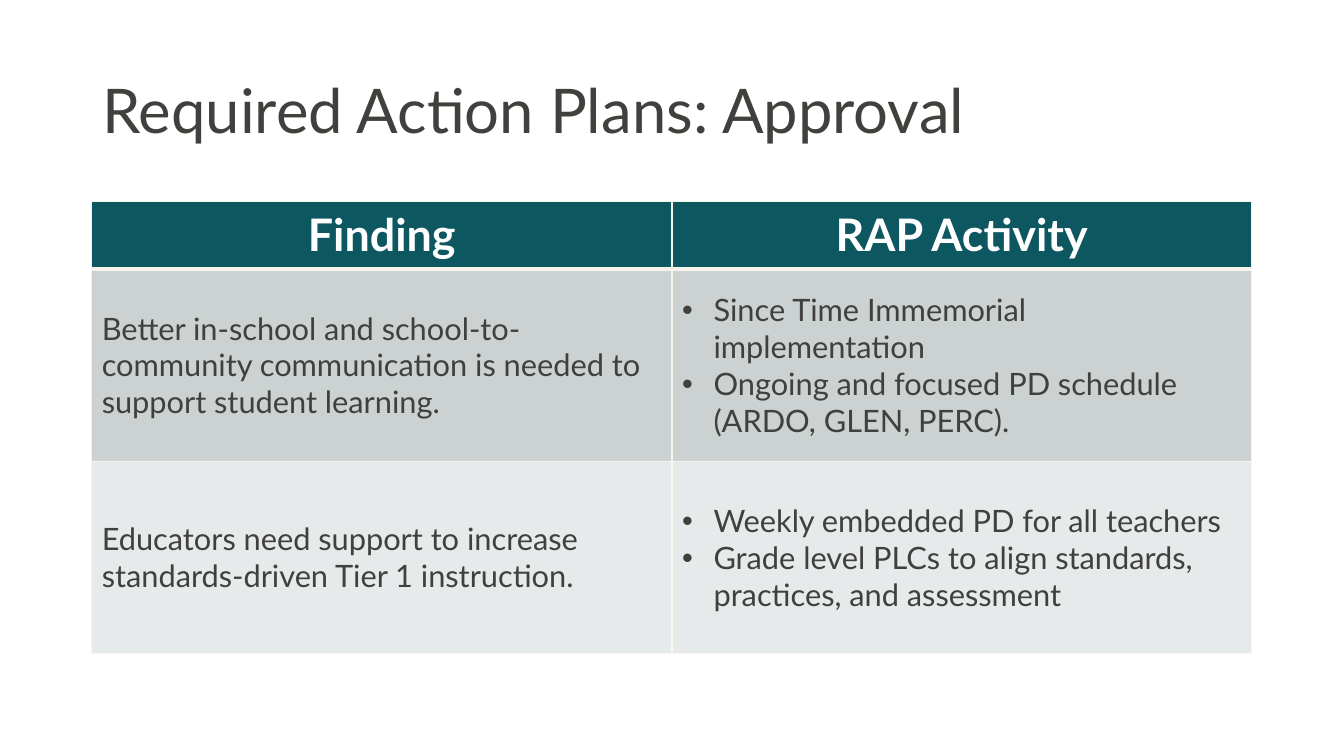
from dataclasses import dataclass

from lxml import etree
from pptx import Presentation
from pptx import util as u
from pptx.dml.color import RGBColor
from pptx.enum import text
from pptx.oxml.ns import qn

FONT = "Lato"
INK = "40403D"
WHITE = "FFFFFF"
TEAL = "0D5761"
BORDER = "F7F5EB"
BULLET_INDENT = u.Pt(22.5)
COLUMN_WIDTHS = (414.5, 414)


@dataclass
class Cell:
    lines: list[str]
    bulleted: bool = False


@dataclass
class Row:
    cells: list[Cell]
    height: float
    fill: str
    top_border: float = 1
    bottom_border: float = 1
    header: bool = False


ROWS = [
    Row([Cell(["Finding"]), Cell(["RAP Activity"])],
        48, TEAL, bottom_border=3, header=True),
    Row([
        Cell(["Better in-school and school-to-community communication "
              "is needed to support student learning."]),
        Cell(["Since Time Immemorial implementation",
              "Ongoing and focused PD schedule (ARDO, GLEN, PERC)."], bulleted=True),
    ], 137.5, "CCD1D2", top_border=3),
    Row([
        Cell(["Educators need support to increase standards-driven Tier 1 instruction."]),
        Cell(["Weekly embedded PD for all teachers",
              "Grade level PLCs to align standards, practices, and assessment"],
             bulleted=True),
    ], 137.5, "E7EAEA"),
]


def color(value: str) -> RGBColor:
    return RGBColor.from_string(value)


def format_runs(paragraph, size: float, value: str, bold: bool = False) -> None:
    for run in paragraph.runs:
        run.font.name = FONT
        run.font.size = u.Pt(size)
        run.font.bold = bold
        run.font.color.rgb = color(value)


def add_bullet(paragraph) -> None:
    properties = paragraph._p.get_or_add_pPr()
    properties.set("marL", str(BULLET_INDENT))
    properties.set("indent", str(-BULLET_INDENT))
    etree.SubElement(properties, qn("a:buFont"), typeface="Arial")
    etree.SubElement(properties, qn("a:buChar"), char="•")


def set_borders(table_cell, row: Row) -> None:
    """Put the four edge lines ahead of the fill, as the schema requires."""
    properties = table_cell._tc.get_or_add_tcPr()
    edges = {"lnL": 1, "lnR": 1, "lnT": row.top_border, "lnB": row.bottom_border}
    for position, (edge, width) in enumerate(edges.items()):
        line = etree.Element(qn(f"a:{edge}"), w=str(u.Pt(width)))
        fill = etree.SubElement(line, qn("a:solidFill"))
        etree.SubElement(fill, qn("a:srgbClr"), val=BORDER)
        properties.insert(position, line)


def fill_cell(table_cell, cell: Cell, row: Row) -> None:
    table_cell.fill.solid()
    table_cell.fill.fore_color.rgb = color(row.fill)
    set_borders(table_cell, row)
    anchor = text.MSO_ANCHOR.TOP if row.header else text.MSO_ANCHOR.MIDDLE
    table_cell.vertical_anchor = anchor
    table_cell.text_frame.text = "\n".join(cell.lines)
    for paragraph in table_cell.text_frame.paragraphs:
        if cell.bulleted:
            add_bullet(paragraph)
        if row.header:
            paragraph.alignment = text.PP_ALIGN.CENTER
            format_runs(paragraph, 32, WHITE, bold=True)
        else:
            format_runs(paragraph, 22, INK)


def add_title(slide, title: str) -> None:
    shape = slide.shapes.add_textbox(u.Pt(66), u.Pt(28.75), u.Pt(828), u.Pt(104.4))
    frame = shape.text_frame
    frame.word_wrap = True
    frame.vertical_anchor = text.MSO_ANCHOR.MIDDLE
    frame.text = title
    paragraph = frame.paragraphs[0]
    paragraph.line_spacing = 0.9
    format_runs(paragraph, 44, INK)


def add_plan_table(slide) -> None:
    shape = slide.shapes.add_table(
        len(ROWS), len(COLUMN_WIDTHS), u.Pt(65.5), u.Pt(144),
        u.Pt(sum(COLUMN_WIDTHS)), u.Pt(sum(row.height for row in ROWS)))
    table = shape.table
    table.horz_banding = False
    for column, width in zip(table.columns, COLUMN_WIDTHS):
        column.width = u.Pt(width)
    for table_row, row in zip(table.rows, ROWS):
        table_row.height = u.Pt(row.height)
        for table_cell, cell in zip(table_row.cells, row.cells):
            fill_cell(table_cell, cell, row)


def main() -> None:
    presentation = Presentation()
    presentation.slide_width = u.Pt(960)
    presentation.slide_height = u.Pt(540)
    slide = presentation.slides.add_slide(presentation.slide_layouts[6])
    add_title(slide, "Required Action Plans: Approval")
    add_plan_table(slide)
    presentation.save("out.pptx")


if __name__ == "__main__":
    main()
